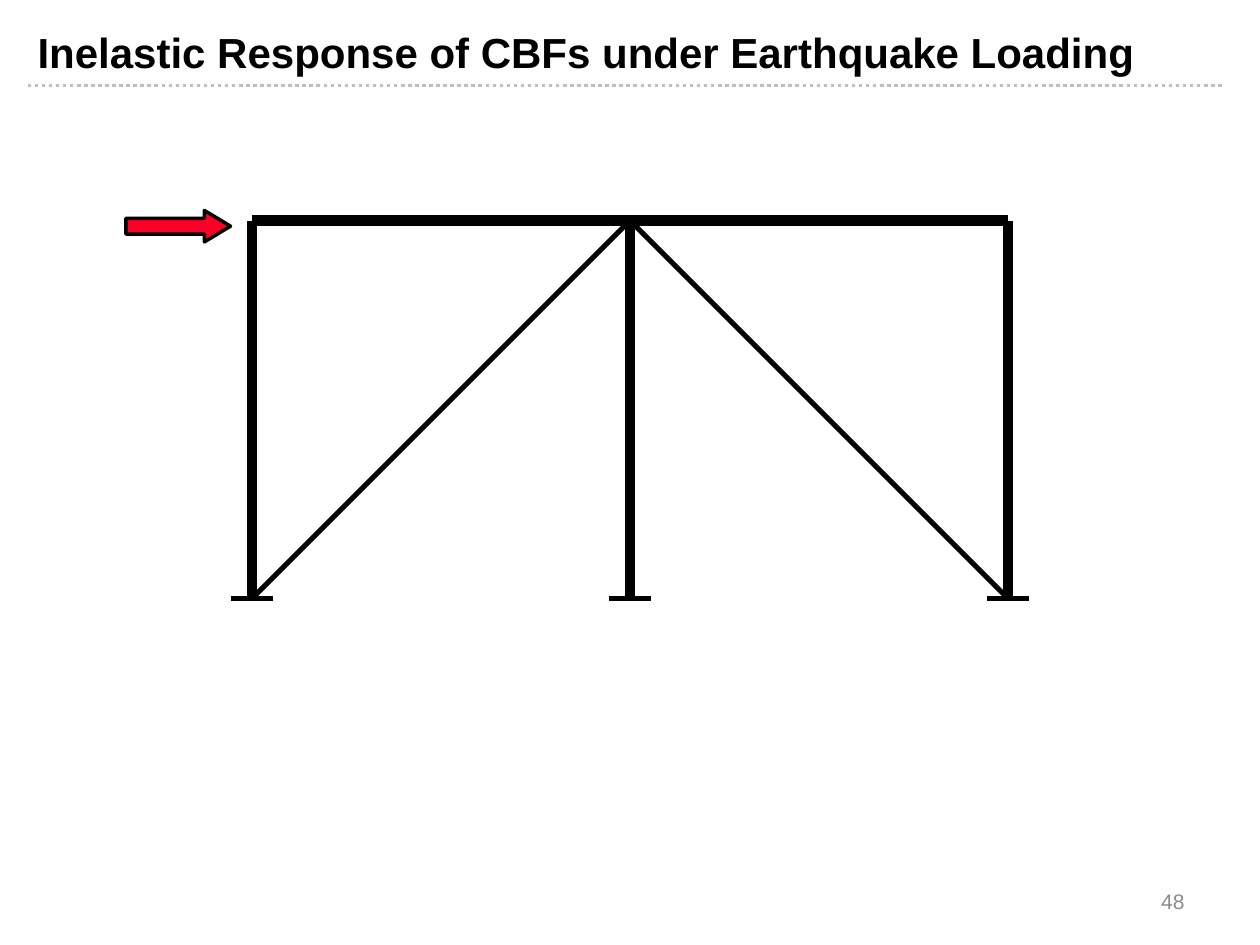
import pptx
import pptx.util
import pptx.dml.color
import pptx.enum.dml
import pptx.enum.shapes
import pptx.enum.text
import pptx.oxml

Inches = pptx.util.Inches
Align = pptx.enum.text.PP_ALIGN
Anchor = pptx.enum.text.MSO_ANCHOR

BLACK, GREY, RED, MUTED = "000000", "BFBFBF", "FC0128", "8C8C8C"
TEXTS = [
    ("Inelastic Response of CBFs under Earthquake Loading", (0.2, 0.16, 8.98, 0.44),
     {"size": 24, "bold": True}, BLACK, Align.LEFT, Anchor.TOP),
    ("48", (7.17, 6.95, 2.33, 0.4), {"size": 12}, MUTED, Align.RIGHT, Anchor.MIDDLE),
]
COLUMNS = [2, 5, 8]
BEAM_Y, BASE_Y = 1.75, 4.75
BASE_HALF_WIDTH = 0.17
MEMBER_WIDTH, BRACE_WIDTH = 6, 3
LOAD_ARROW = (1, 1.67, 0.83, 0.25)


def color(value):
    return pptx.dml.color.RGBColor.from_string(value)


def style_line(line, line_color, width):
    line.color.rgb = color(line_color)
    line.width = pptx.util.Pt(width)


def add_line(slide, start, end, width, line_color=BLACK):
    connector = slide.shapes.add_connector(
        pptx.enum.shapes.MSO_CONNECTOR.STRAIGHT, *map(Inches, start + end))
    style_line(connector.line, line_color, width)
    properties = connector._element.spPr
    properties.append(pptx.oxml.parse_xml(
        '<a:effectLst xmlns:a="http://schemas.openxmlformats.org/drawingml/2006/main"/>'))
    return connector


def add_text(slide, text, box, font, font_color, alignment, anchor):
    frame = slide.shapes.add_textbox(*map(Inches, box)).text_frame
    frame.word_wrap = True
    frame.vertical_anchor = anchor
    paragraph = frame.paragraphs[0]
    paragraph.text = text
    paragraph.alignment = alignment
    run_font = paragraph.runs[0].font
    for name, value in {**font, "size": pptx.util.Pt(font["size"]), "name": "Arial"}.items():
        setattr(run_font, name, value)
    run_font.color.rgb = color(font_color)


def add_frame(slide):
    for x in COLUMNS:
        add_line(slide, (x, BASE_Y), (x, BEAM_Y), MEMBER_WIDTH)
    for left, right in zip(COLUMNS, COLUMNS[1:]):
        add_line(slide, (left, BEAM_Y), (right, BEAM_Y), MEMBER_WIDTH)
    for x in COLUMNS:
        add_line(slide, (x - BASE_HALF_WIDTH, BASE_Y), (x + BASE_HALF_WIDTH, BASE_Y), BRACE_WIDTH)
    left, middle, right = COLUMNS
    add_line(slide, (left, BASE_Y), (middle, BEAM_Y), BRACE_WIDTH)
    add_line(slide, (middle, BEAM_Y), (right, BASE_Y), BRACE_WIDTH)


def add_load(slide):
    arrow = slide.shapes.add_shape(
        pptx.enum.shapes.MSO_SHAPE.RIGHT_ARROW, *map(Inches, LOAD_ARROW))
    arrow.shadow.inherit = False
    arrow.adjustments[0] = 0.5
    arrow.adjustments[1] = 0.83
    arrow.fill.solid()
    arrow.fill.fore_color.rgb = color(RED)
    style_line(arrow.line, BLACK, 2)


def main():
    presentation = pptx.Presentation()
    presentation.slide_width = Inches(10)
    presentation.slide_height = Inches(7.5)
    slide = presentation.slides.add_slide(presentation.slide_layouts[6])
    rule = add_line(slide, (0.22, 0.68), (9.72, 0.68), 2, GREY)
    rule.line.dash_style = pptx.enum.dml.MSO_LINE.ROUND_DOT
    add_frame(slide)
    add_load(slide)
    for text in TEXTS:
        add_text(slide, *text)
    presentation.save("out.pptx")


if __name__ == "__main__":
    main()
